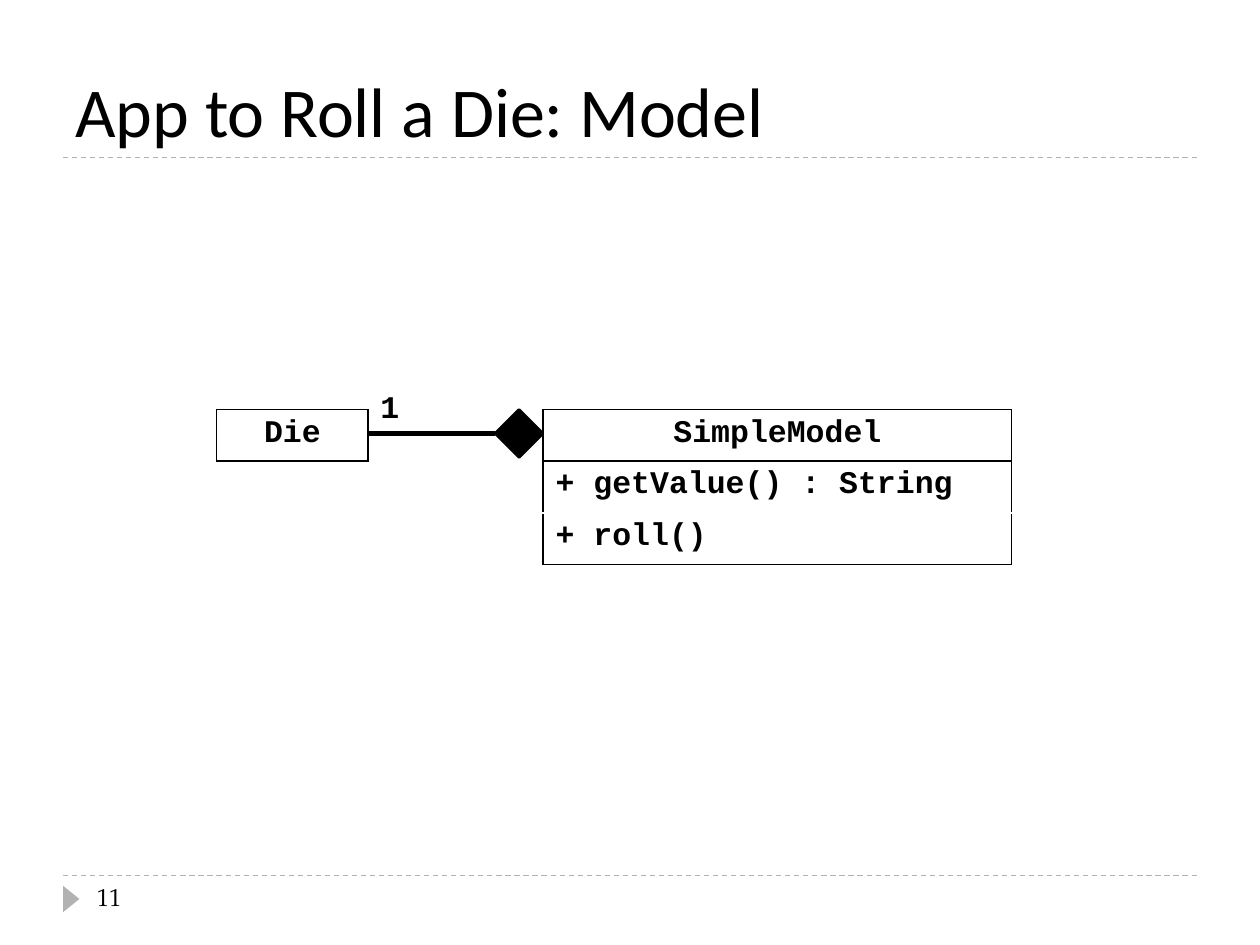
"""Builds a slide with a class diagram of the die-rolling model."""
from lxml import etree
from pptx import Presentation
from pptx.dml.color import RGBColor
from pptx.enum.dml import MSO_LINE
from pptx.enum.shapes import MSO_CONNECTOR, MSO_SHAPE
from pptx.enum.text import MSO_ANCHOR, PP_ALIGN
from pptx.oxml.ns import qn
from pptx.util import Inches, Pt

BLACK = RGBColor(0x00, 0x00, 0x00)
WHITE = RGBColor(0xFF, 0xFF, 0xFF)
GREY = RGBColor(0xB2, 0xB2, 0xB2)
DASH = MSO_LINE.DASH
STRAIGHT = MSO_CONNECTOR.STRAIGHT
TRIANGLE = MSO_SHAPE.ISOSCELES_TRIANGLE
DIAMOND = MSO_SHAPE.DIAMOND
BOTTOM = MSO_ANCHOR.BOTTOM
LEFT = PP_ALIGN.LEFT
CENTER = PP_ALIGN.CENTER
ROW = 0.41
TOP = 3.25

deck = Presentation()
deck.slide_width = Inches(10)
deck.slide_height = Inches(7.5)
slide = deck.slides.add_slide(deck.slide_layouts[6])
shapes = slide.shapes


def style(frame, text, font, size, bold=False, align=LEFT):
    frame.text = text
    para = frame.paragraphs[0]
    para.alignment = align
    face = para.runs[0].font
    face.name = font
    face.size = Pt(size)
    face.bold = bold
    face.color.rgb = BLACK


def rule(left, right, y, color, width):
    line = shapes.add_connector(
        STRAIGHT, Inches(left), Inches(y), Inches(right), Inches(y))
    line.line.color.rgb = color
    line.line.width = Pt(width)
    etree.SubElement(line._element.spPr, qn("a:effectLst"))
    return line


for y in (6.95, 1.25):
    rule(0.5, 9.5, y, GREY, 0.75).line.dash_style = DASH

mark = shapes.add_shape(
    TRIANGLE, Inches(0.46), Inches(7.07), Inches(0.21), Inches(0.13))
mark.rotation = 90
mark.shadow.inherit = False
mark.fill.solid()
mark.fill.fore_color.rgb = GREY
mark.line.fill.background()

labels = [
    ("App to Roll a Die: Model", 0.5, 0.17, 9, 1.08, "Calibri", 40, False),
    ("11", 0.67, 6.95, 2.17, 0.4, "TeX Gyre Pagella", 14, False),
    ("1", 2.92, 3.02, 0.35, 0.4, "Courier New", 18, True),
]
for text, left, top, width, height, font, size, bold in labels:
    box = shapes.add_textbox(
        Inches(left), Inches(top), Inches(width), Inches(height))
    frame = box.text_frame
    frame.word_wrap = width > 1
    if size == 40:
        frame.vertical_anchor = BOTTOM
    style(frame, text, font, size, bold)

tables = [
    (4.31, 3.72, ["SimpleModel", "+ getValue() : String", "+ roll()"]),
    (1.72, 1.2, ["Die"]),
]
for left, width, rows in tables:
    grid = shapes.add_table(
        len(rows), 1, Inches(left), Inches(TOP),
        Inches(width), Inches(ROW * len(rows))).table
    grid.first_row = False
    grid.horz_banding = False
    for i, text in enumerate(rows):
        cell = grid.cell(i, 0)
        style(cell.text_frame, text, "Courier New", 18, True,
              LEFT if i else CENTER)
        props = cell._tc.get_or_add_tcPr()
        sides = {"L": BLACK, "R": BLACK,
                 "T": WHITE if i == 2 else BLACK,
                 "B": WHITE if i == 1 else BLACK}
        for side, color in sides.items():
            edge = etree.SubElement(props, qn("a:ln" + side), w=str(Pt(1)))
            paint = etree.SubElement(edge, qn("a:solidFill"))
            etree.SubElement(paint, qn("a:srgbClr"), val=str(color))
        cell.fill.solid()
        cell.fill.fore_color.rgb = WHITE

gem = shapes.add_shape(
    DIAMOND, Inches(3.93), Inches(TOP), Inches(0.38), Inches(0.38))
gem.shadow.inherit = False
gem.fill.solid()
gem.fill.fore_color.rgb = BLACK
gem.line.color.rgb = BLACK
gem.line.width = Pt(1.5)
rule(3.93, 2.92, TOP + 0.19, BLACK, 3)

deck.save("out.pptx")
